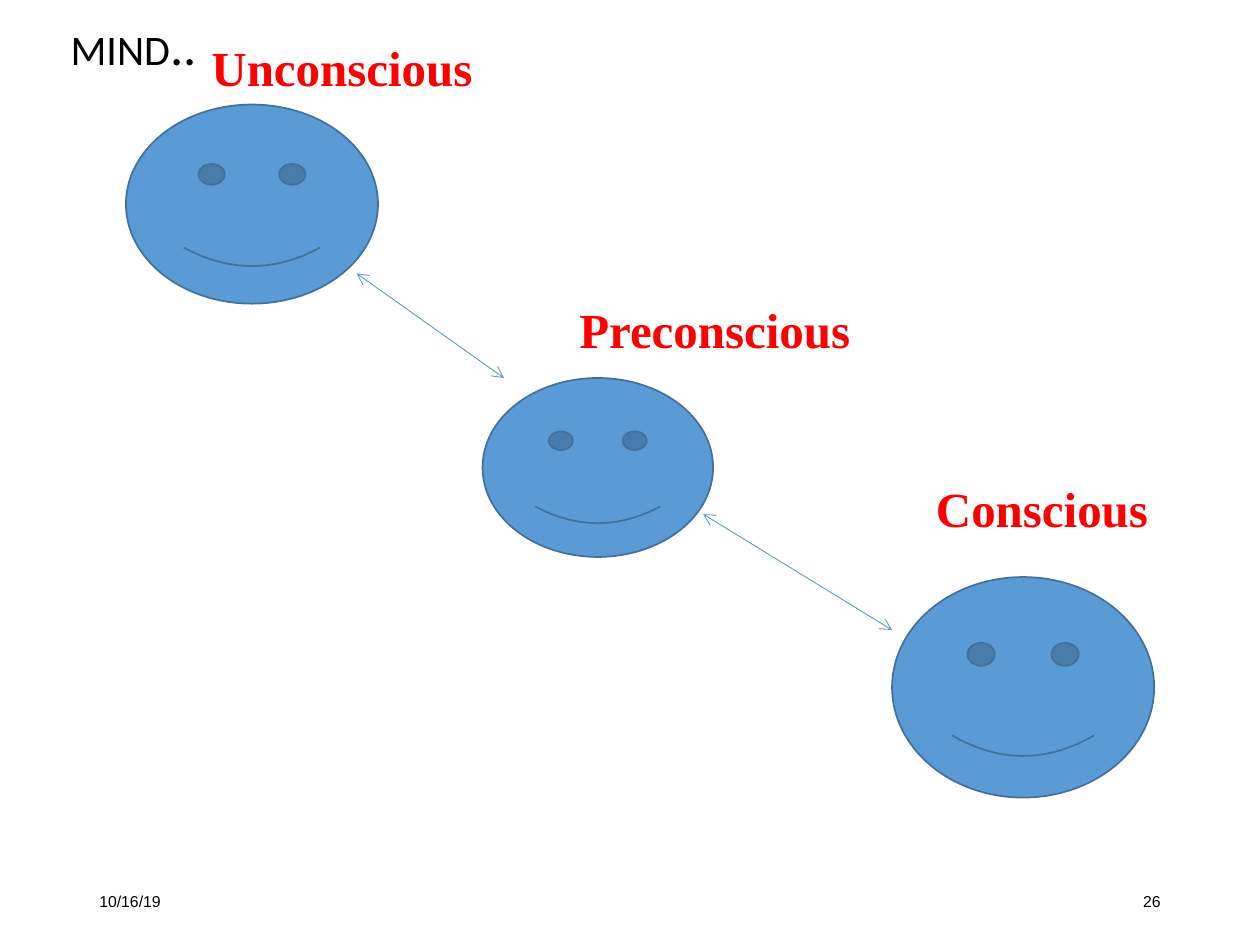
from dataclasses import dataclass
from typing import NamedTuple

from lxml.etree import SubElement
from pptx import Presentation
from pptx.dml.color import RGBColor
from pptx.enum.shapes import MSO_CONNECTOR, MSO_SHAPE
from pptx.enum.text import MSO_ANCHOR, MSO_AUTO_SIZE, PP_ALIGN
from pptx.oxml.ns import qn
from pptx.slide import Slide
from pptx.text.text import TextFrame
from pptx.util import Inches, Pt


@dataclass(frozen=True)
class Theme:
    black: RGBColor = RGBColor(0, 0, 0)
    red: RGBColor = RGBColor(0xFF, 0, 0)
    blue: RGBColor = RGBColor(0x5B, 0x9B, 0xD5)
    edge: RGBColor = RGBColor(0x41, 0x71, 0x9C)
    title: int = 24
    dots: int = 30
    label: int = 28
    small: int = 9
    head: str = "Calibri"
    serif: str = "Times New Roman"
    sans: str = "Arial"


class Box(NamedTuple):
    left: float
    top: float
    width: float
    height: float


class Level(NamedTuple):
    name: str
    label: Box
    face: Box


class Link(NamedTuple):
    start: tuple[float, float]
    end: tuple[float, float]


THEME = Theme()

LEVELS = [
    Level("Unconscious", Box(1.58, 0.25, 2.33, 0.57), Box(1, 0.83, 2, 1.58)),
    Level("Preconscious", Box(4.5, 2.33, 2.5, 0.57), Box(3.83, 3, 1.83, 1.42)),
    Level("Conscious", Box(7.33, 3.75, 2, 0.57), Box(7.08, 4.58, 2.08, 1.75)),
]
LINKS = [Link((2.83, 2.17), (4, 3)), Link((5.58, 4.08), (7.08, 5))]


def write(frame: TextFrame, text: str, *, size: int, font: str,
          color: RGBColor = THEME.black, bold: bool = False,
          align: PP_ALIGN = PP_ALIGN.LEFT) -> None:
    para = frame.paragraphs[0]
    para.alignment = align
    run = para.add_run()
    run.text = text
    run.font.size = Pt(size)
    run.font.name = font
    run.font.bold = bold
    run.font.color.rgb = color


def add_box(slide: Slide, box: Box, anchor: MSO_ANCHOR, fit: MSO_AUTO_SIZE) -> TextFrame:
    frame = slide.shapes.add_textbox(*map(Inches, box)).text_frame
    frame.word_wrap = True
    frame.vertical_anchor = anchor
    frame.auto_size = fit
    return frame


def add_title(slide: Slide, box: Box) -> None:
    title = slide.shapes.title
    title.left, title.top, title.width, title.height = map(Inches, box)
    frame = title.text_frame
    frame.auto_size = MSO_AUTO_SIZE.NONE
    frame.vertical_anchor = MSO_ANCHOR.MIDDLE
    frame.paragraphs[0].line_spacing = 0.9
    write(frame, "MIND", size=THEME.title, font=THEME.head)
    write(frame, "..", size=THEME.dots, font=THEME.head)


def add_foot(slide: Slide, text: str, left: float, align: PP_ALIGN) -> None:
    frame = add_box(slide, Box(left, 6.95, 2.25, 0.4), MSO_ANCHOR.MIDDLE, MSO_AUTO_SIZE.NONE)
    write(frame, text, size=THEME.small, font=THEME.sans, align=align)


def add_face(slide: Slide, box: Box) -> None:
    face = slide.shapes.add_shape(MSO_SHAPE.SMILEY_FACE, *map(Inches, box))
    face.shadow.inherit = False
    face.fill.solid()
    face.fill.fore_color.rgb = THEME.blue
    face.line.color.rgb = THEME.edge
    face.line.width = Pt(1)


def add_label(slide: Slide, level: Level) -> None:
    frame = add_box(slide, level.label, MSO_ANCHOR.TOP, MSO_AUTO_SIZE.SHAPE_TO_FIT_TEXT)
    write(frame, level.name, size=THEME.label, font=THEME.serif, color=THEME.red, bold=True)


def add_link(slide: Slide, link: Link) -> None:
    ends = map(Inches, link.start + link.end)
    line = slide.shapes.add_connector(MSO_CONNECTOR.STRAIGHT, *ends)
    line.line.color.rgb = THEME.blue
    line.line.width = Pt(0.5)
    props = line.line._get_or_add_ln()
    for tag in ("a:headEnd", "a:tailEnd"):
        SubElement(props, qn(tag), type="arrow")
    SubElement(props.getparent(), qn("a:effectLst"))


def main() -> None:
    deck = Presentation()
    deck.slide_width, deck.slide_height = Inches(10), Inches(7.5)
    slide = deck.slides.add_slide(deck.slide_layouts[5])
    add_title(slide, Box(0.46, 0.25, 9, 0.27))
    add_foot(slide, "10/16/19", 0.69, PP_ALIGN.LEFT)
    add_foot(slide, "26", 7.06, PP_ALIGN.RIGHT)
    for level in LEVELS:
        add_face(slide, level.face)
        add_label(slide, level)
    for link in LINKS:
        add_link(slide, link)
    deck.save("out.pptx")


if __name__ == "__main__":
    main()
